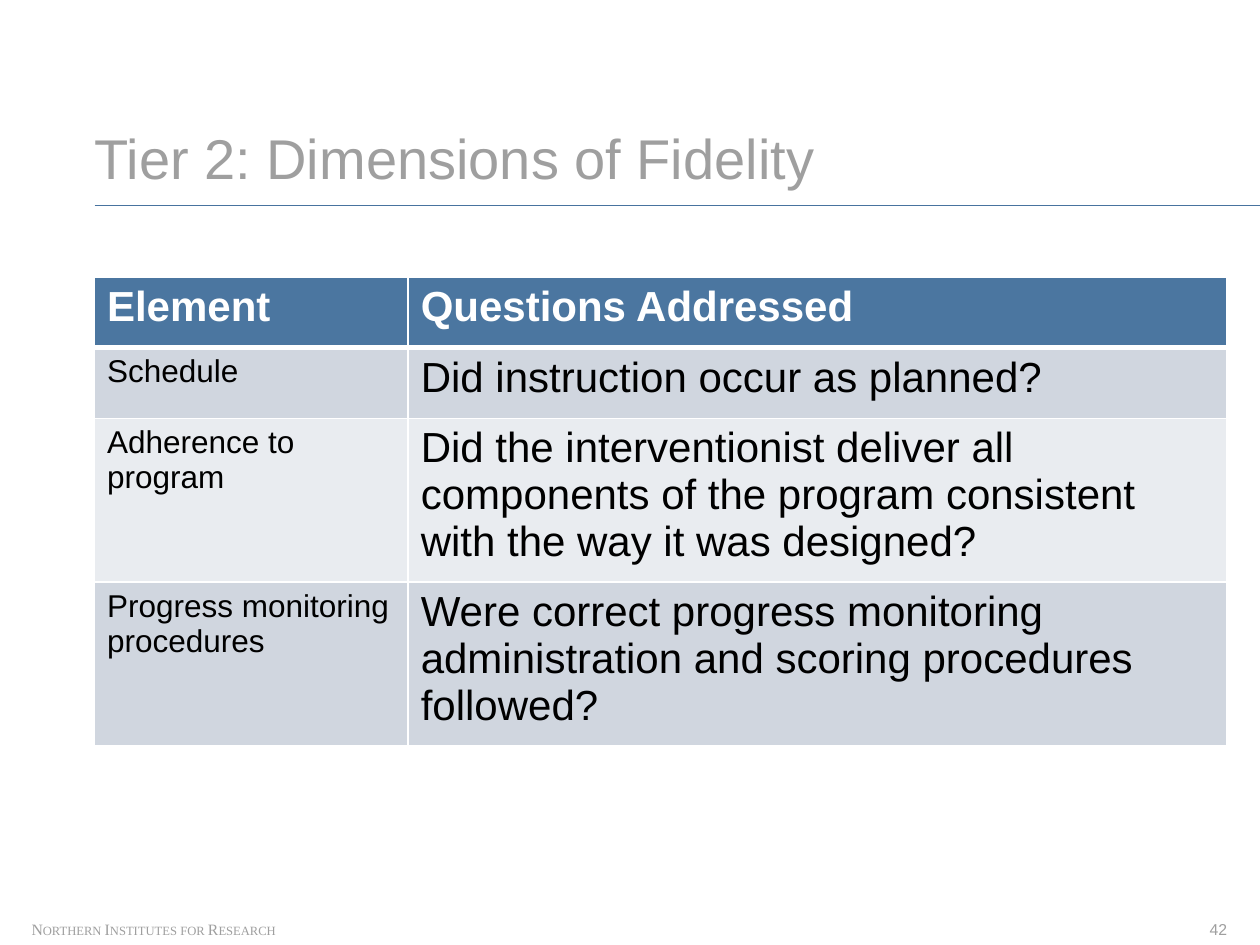
from dataclasses import dataclass

from lxml import etree
from pptx import Presentation
from pptx import util as u
from pptx.dml.color import RGBColor
from pptx.enum import shapes, text
from pptx.oxml import ns


@dataclass(frozen=True)
class Theme:
    sans: str = "Arial"
    serif: str = "Times New Roman"
    grey: str = "9F9F9F"
    rule: str = "47739F"
    header: str = "4B76A0"
    bands: tuple[str, str] = ("D0D6DF", "E9ECF0")
    white: str = "FFFFFF"
    black: str = "000000"
    title_size: float = 32
    large: float = 24
    label: float = 18
    footer: float = 9


@dataclass(frozen=True)
class Style:
    size: float
    color: str
    font: str = Theme.sans
    bold: bool = False


@dataclass(frozen=True)
class Dimension:
    element: str
    question: str


THEME = Theme()
WIDTH, HEIGHT = 10, 7.5
LEFT, RIGHT = 0.75, 9.74
CONTENT_WIDTH = RIGHT - LEFT
FOOTER_TOP, FOOTER_HEIGHT = 7.3, 0.15
TABLE_TOP, ROW_HEIGHT = 2.2, 0.56
ELEMENT_COLUMN = 2.49

HEADINGS = Dimension("Element", "Questions Addressed")
DIMENSIONS = [
    Dimension("Schedule", "Did instruction occur as planned?"),
    Dimension(
        "Adherence to program",
        "Did the interventionist deliver all components of the program "
        "consistent with the way it was designed?",
    ),
    Dimension(
        "Progress monitoring procedures",
        "Were correct progress monitoring administration and scoring "
        "procedures followed?",
    ),
]


def add_run(paragraph, words: str, style: Style):
    run = paragraph.add_run()
    run.text = words
    run.font.name = style.font
    run.font.size = u.Pt(style.size)
    run.font.bold = style.bold
    run.font.color.rgb = RGBColor.from_string(style.color)
    return run


def fit_frame(frame, wrap: bool) -> None:
    """Remove the margins and let the shape follow its text."""
    frame.margin_left = frame.margin_right = 0
    frame.margin_top = frame.margin_bottom = 0
    frame.word_wrap = wrap
    frame.auto_size = text.MSO_AUTO_SIZE.SHAPE_TO_FIT_TEXT


def add_title(slide, words: str) -> None:
    title = slide.shapes.title
    title.left, title.top = u.Inches(LEFT), u.Inches(0.97)
    title.width, title.height = u.Inches(CONTENT_WIDTH), u.Inches(0.54)
    frame = title.text_frame
    fit_frame(frame, wrap=True)
    frame.vertical_anchor = text.MSO_ANCHOR.BOTTOM
    paragraph = frame.paragraphs[0]
    paragraph.alignment = text.PP_ALIGN.LEFT
    add_run(paragraph, words, Style(THEME.title_size, THEME.grey))


def add_title_rule(slide) -> None:
    y = u.Inches(1.63)
    rule = slide.shapes.add_connector(
        shapes.MSO_CONNECTOR.STRAIGHT, u.Inches(LEFT), y, u.Inches(WIDTH), y
    )
    rule.line.color.rgb = RGBColor.from_string(THEME.rule)
    rule.line.width = u.Pt(0.5)
    etree.SubElement(rule.element.spPr, ns.qn("a:effectLst"))


def add_footer(slide, words: str, left: float, width: float, align, font: str):
    box = slide.shapes.add_textbox(
        u.Inches(left), u.Inches(FOOTER_TOP), u.Inches(width), u.Inches(FOOTER_HEIGHT)
    )
    fit_frame(box.text_frame, wrap=False)
    paragraph = box.text_frame.paragraphs[0]
    paragraph.alignment = align
    return add_run(paragraph, words, Style(THEME.footer, THEME.grey, font))


def set_borders(cell, top: float, bottom: float) -> None:
    """Draw white borders; the side borders are 1 point wide."""
    properties = cell._tc.get_or_add_tcPr()
    for side, points in (("L", 1), ("R", 1), ("T", top), ("B", bottom)):
        line = etree.SubElement(
            properties, ns.qn(f"a:ln{side}"), w=str(int(u.Pt(points)))
        )
        fill = etree.SubElement(line, ns.qn("a:solidFill"))
        etree.SubElement(fill, ns.qn("a:srgbClr"), val=THEME.white)


def fill_row(table, row: int, content: Dimension, color: str, styles) -> None:
    top = 3 if row == 1 else 1
    bottom = 3 if row == 0 else 1
    for column, words in enumerate((content.element, content.question)):
        cell = table.cell(row, column)
        set_borders(cell, top, bottom)
        cell.fill.solid()
        cell.fill.fore_color.rgb = RGBColor.from_string(color)
        add_run(cell.text_frame.paragraphs[0], words, styles[column])


def add_dimensions_table(slide) -> None:
    row_count = len(DIMENSIONS) + 1
    table = slide.shapes.add_table(
        row_count, 2, u.Inches(LEFT), u.Inches(TABLE_TOP),
        u.Inches(CONTENT_WIDTH), u.Inches(ROW_HEIGHT * row_count),
    ).table
    table.columns[0].width = u.Inches(ELEMENT_COLUMN)
    table.columns[1].width = u.Inches(CONTENT_WIDTH - ELEMENT_COLUMN)
    for row in table.rows:
        row.height = u.Inches(ROW_HEIGHT)

    heading = Style(THEME.large, THEME.white, bold=True)
    body = (Style(THEME.label, THEME.black), Style(THEME.large, THEME.black))
    fill_row(table, 0, HEADINGS, THEME.header, (heading, heading))
    for index, dimension in enumerate(DIMENSIONS):
        fill_row(table, index + 1, dimension, THEME.bands[index % 2], body)


def main() -> None:
    deck = Presentation()
    deck.slide_width, deck.slide_height = u.Inches(WIDTH), u.Inches(HEIGHT)
    slide = deck.slides.add_slide(deck.slide_layouts[5])

    institute = add_footer(
        slide, "Northern Institutes for Research", 0.25, 1.95,
        text.PP_ALIGN.LEFT, THEME.serif,
    )
    institute.font._element.set("cap", "small")
    add_title_rule(slide)
    add_title(slide, "Tier 2: Dimensions of Fidelity")
    add_footer(slide, "42", RIGHT - 0.15, 0.15, text.PP_ALIGN.RIGHT, THEME.sans)
    add_dimensions_table(slide)
    deck.save("out.pptx")


if __name__ == "__main__":
    main()
